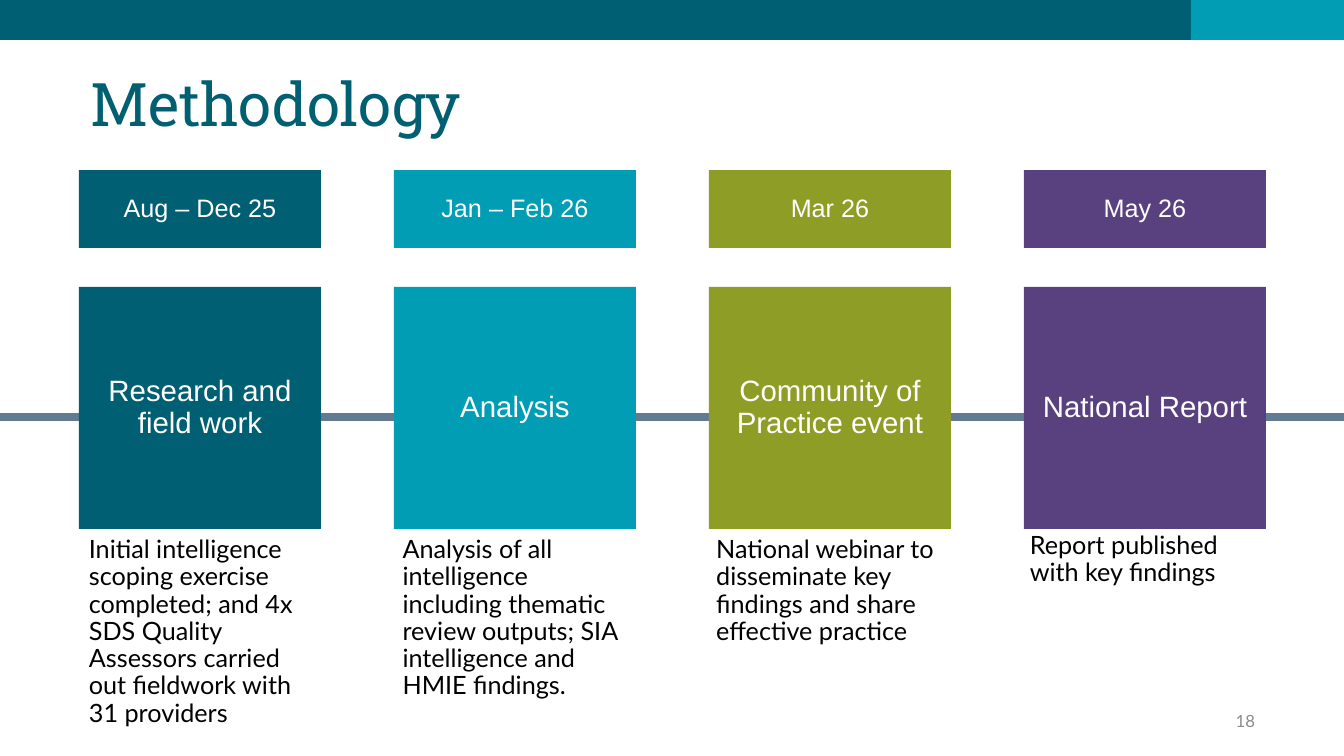
from dataclasses import dataclass

from pptx import Presentation
from pptx import util as u
from pptx.dml.color import RGBColor
from pptx.enum import shapes, text
from pptx.oxml import parse_xml
from pptx.oxml.ns import nsdecls, qn

PX = 914400 / 100.8
TOP, MIDDLE = text.MSO_ANCHOR.TOP, text.MSO_ANCHOR.MIDDLE
LEFT, CENTER, RIGHT = text.PP_ALIGN.LEFT, text.PP_ALIGN.CENTER, text.PP_ALIGN.RIGHT


@dataclass(frozen=True)
class Theme:
    """Colours, fonts and type sizes of the deck."""
    teal: str = "005F72"
    cyan: str = "009DB5"
    olive: str = "8D9D25"
    purple: str = "58417E"
    line: str = "627B92"
    title: str = "005F71"
    white: str = "FFFFFF"
    black: str = "000000"
    grey: str = "8C8C8C"
    head_font: str = "Roboto Slab"
    body_font: str = "Lato"
    box_font: str = "Arial"
    title_size: float = 42.9
    stage_size: int = 21
    body_size: int = 18
    number_size: int = 12


T = Theme()
STAGES = [
    ("Aug – Dec 25", "Research and field work", T.teal,
     "Initial intelligence scoping exercise completed; and 4x SDS Quality "
     "Assessors carried out fieldwork with 31 providers"),
    ("Jan – Feb 26", "Analysis", T.cyan,
     "Analysis of all intelligence including thematic review outputs; "
     "SIA intelligence and HMIE findings."),
    ("Mar 26", "Community of Practice event", T.olive,
     "National webinar to disseminate key findings and share effective practice"),
    ("May 26", "National Report", T.purple,
     "Report published with key findings"),
]


def emu(*lengths):
    """Turn px lengths into EMU."""
    return [u.Emu(round(n * PX)) for n in lengths]


def write(sp, words, *, font=T.body_font, size=T.body_size, color=T.black,
          align=LEFT, anchor=TOP, spacing=0.9):
    """Put one formatted paragraph into a shape and return its run."""
    tf = sp.text_frame
    tf.word_wrap = True
    tf.auto_size = text.MSO_AUTO_SIZE.NONE
    tf.vertical_anchor = anchor
    p = tf.paragraphs[0]
    p.alignment = align
    p.line_spacing = spacing
    r = p.add_run()
    r.text = words
    r.font.name = font
    r.font.size = u.Pt(size)
    r.font.color.rgb = RGBColor.from_string(color)
    return r


def block(s, box, fill):
    """Add a plain filled rectangle."""
    sp = s.shapes.add_shape(shapes.MSO_SHAPE.RECTANGLE, *emu(*box))
    sp.shadow.inherit = False
    sp.fill.solid()
    sp.fill.fore_color.rgb = RGBColor.from_string(fill)
    sp.line.fill.background()
    return sp


def banner(s, x, y, w, h, accent=153):
    """Draw the two-colour band with its accent at the right."""
    block(s, (x, y, w - accent, h), T.teal)
    block(s, (x + w - accent, y, accent, h), T.cyan)


def heading(s, x, y, w, h, words):
    """Place and format the title placeholder."""
    sp = s.shapes.title
    sp.left, sp.top, sp.width, sp.height = emu(x, y, w, h)
    write(sp, words, font=T.head_font, size=T.title_size, color=T.title, spacing=0.8)


def slide_number(s, x, y, w, h, number):
    """Add a right-aligned slide number field."""
    sp = s.shapes.add_textbox(*emu(x, y, w, h))
    r = write(sp, str(number), size=T.number_size, color=T.grey,
              align=RIGHT, anchor=MIDDLE, spacing=1.0)
    fld = r._r
    fld.tag = qn("a:fld")
    fld.set("id", "{B6F15528-21DE-4FAA-801E-634DDDAF4B2B}")
    fld.set("type", "slidenum")


def axis(s, x, y, w):
    """Draw the horizontal line behind the stages."""
    line = s.shapes.add_connector(shapes.MSO_CONNECTOR.STRAIGHT, *emu(x, y, x + w, y))
    line.line.color.rgb = RGBColor.from_string(T.line)
    line.line.width = u.Pt(6)
    line._element.spPr.append(parse_xml(f"<a:effectLst {nsdecls('a')}/>"))


def stage(s, x, y, w, date, name, fill, caption, shift):
    """Stack a date, a square and a caption in one column."""
    parts = ((date, y, 78, T.body_size), (name, y + 117, w, T.stage_size))
    for words, top, h, size in parts:
        write(block(s, (x, top, w, h), fill), words, font=T.box_font, size=size,
              color=T.white, align=CENTER, anchor=MIDDLE)
    dx, dy = shift
    sp = s.shapes.add_textbox(*emu(x + dx, y + 117 + w + dy, w, 127))
    write(sp, caption)


def timeline(s, x, y, w, stages, column=242):
    """Spread the stages evenly over the given width."""
    pitch = (w - column) / (len(stages) - 1)
    for i, (date, name, fill, caption) in enumerate(stages):
        last = i == len(stages) - 1
        stage(s, x + i * pitch, y, column, date, name, fill, caption,
              (-i * 4 / 3, -1 if last else 3))


def main():
    """Build and save the methodology slide."""
    number = 18
    prs = Presentation()
    prs.slide_width, prs.slide_height = emu(1344, 756)
    prs.element.set("firstSlideNum", str(number))
    s = prs.slides.add_slide(prs.slide_layouts[5])
    banner(s, 0, 0, 1344, 40)
    heading(s, 80, 75, 1185, 75, "Methodology")
    slide_number(s, 963, 701, 302, 40, number)
    axis(s, 0, 417, 1344)
    timeline(s, 79, 170, 1187, STAGES)
    prs.save("out.pptx")


if __name__ == "__main__":
    main()
